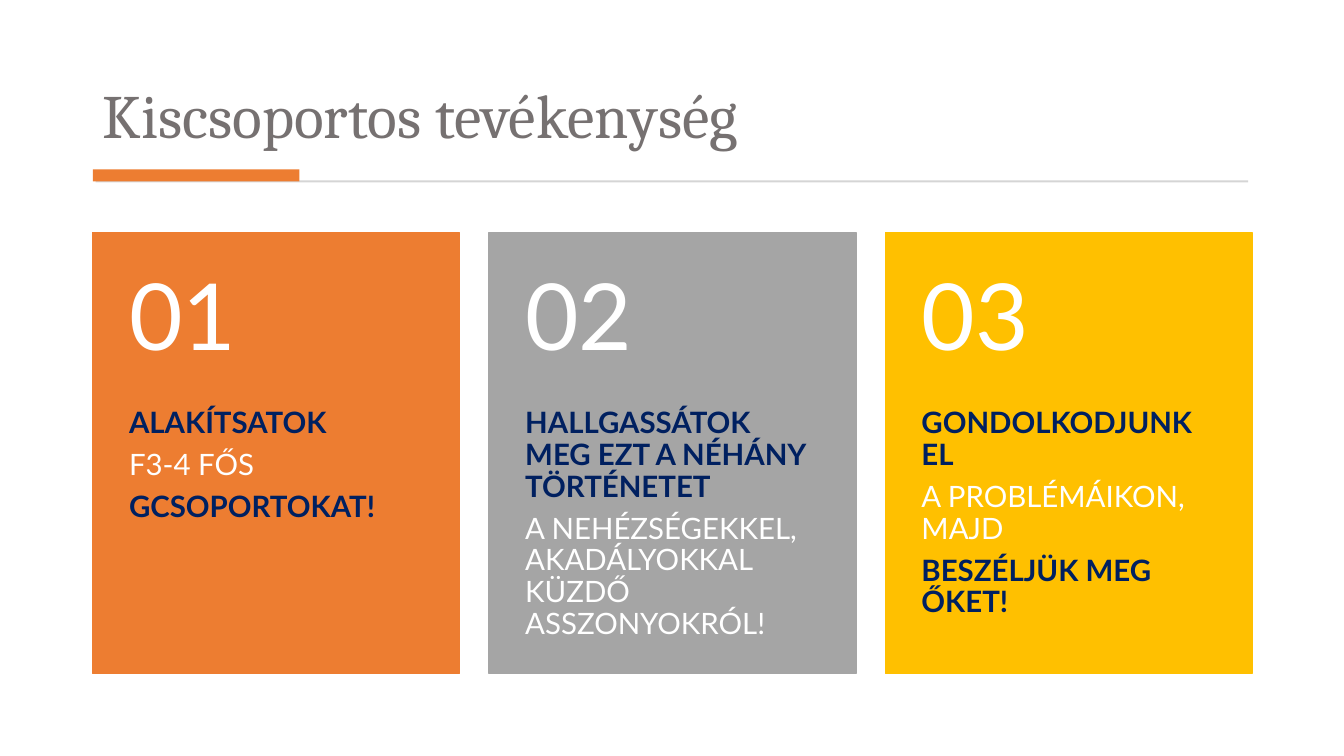
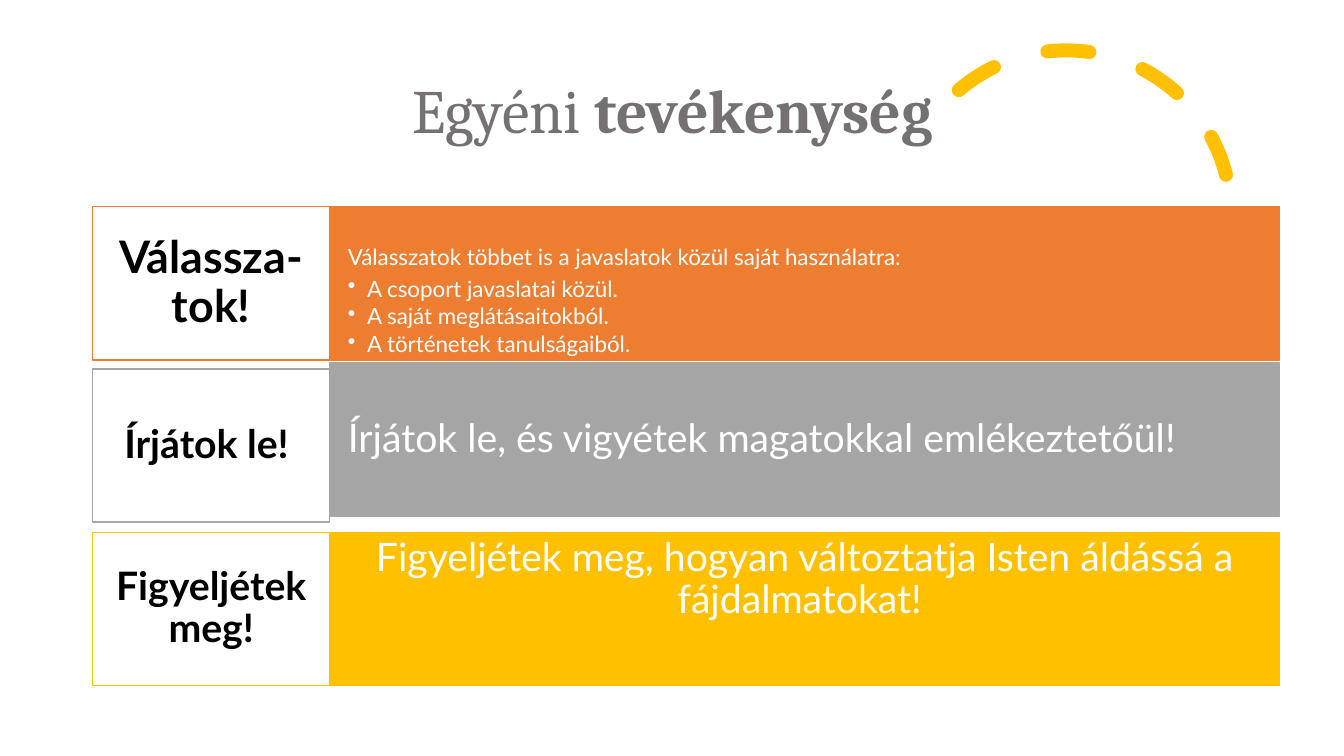
from lxml.etree import SubElement
from pptx import Presentation
from pptx.dml.color import RGBColor
from pptx.enum.dml import MSO_LINE
from pptx.enum.shapes import MSO_SHAPE
from pptx.enum.text import MSO_ANCHOR, PP_ALIGN
from pptx.oxml.ns import qn
from pptx.util import Pt

EMU = 9144  # one px is a hundredth of an inch
ORANGE, GRAY, GOLD = "ED7D31", "A5A5A5", "FFC000"
WHITE, BLACK, NAVY = "FFFFFF", "000000", "002060"
TITLE, RULE = "767171", "D5D5D5"
HEAD, BODY = "Cambria", "Lato"
TOP, MID, LOW = MSO_ANCHOR.TOP, MSO_ANCHOR.MIDDLE, MSO_ANCHOR.BOTTOM
LEFT, MIDST = PP_ALIGN.LEFT, PP_ALIGN.CENTER


def px(*sizes):
    return [size * EMU for size in sizes]


def color(code):
    return RGBColor.from_string(code)


class Deck:
    """Holds the shared style and the slide being built."""

    def __init__(self):
        self.file = Presentation()
        self.file.slide_width, self.file.slide_height = px(1333, 750)
        self.slide = None

    def page(self):
        self.slide = self.file.slides.add_slide(self.file.slide_layouts[6])

    def rect(self, box, fill, line=None):
        shape = self.slide.shapes.add_shape(MSO_SHAPE.RECTANGLE, *px(*box))
        shape.shadow.inherit = False
        shape.fill.solid()
        shape.fill.fore_color.rgb = color(fill)
        if line:
            shape.line.color.rgb = color(line)
            shape.line.width = Pt(1)
        else:
            shape.line.fill.background()
        return shape

    def frame(self, box):
        return self.slide.shapes.add_textbox(*px(*box))

    def text(self, shape, paras, size, inset, anchor=TOP, align=LEFT, font=BODY):
        """Fill a shape; each paragraph is (runs, bullet), each run (text, colour, bold)."""
        frame = shape.text_frame
        frame.word_wrap = True
        frame.vertical_anchor = anchor
        (frame.margin_left, frame.margin_top,
         frame.margin_right, frame.margin_bottom) = px(*inset)
        for n, (runs, bullet) in enumerate(paras):
            para = frame.add_paragraph() if n else frame.paragraphs[0]
            if bullet:
                self.bullet(para)
            para.alignment = align
            para.line_spacing = 0.9
            if n < len(paras) - 1:
                para.space_after = Pt(round(size * (0.15 if bullet else 0.35), 1))
            for words, ink, bold in runs:
                run = para.add_run()
                run.text = words
                run.font.name = font
                run.font.size = Pt(size)
                run.font.bold = bold
                run.font.color.rgb = color(ink)

    def bullet(self, para):
        props = para._p.get_or_add_pPr()
        indent, = px(19)
        props.set("marL", str(indent))
        props.set("indent", str(-indent))
        SubElement(props, qn("a:buChar")).set("char", "•")

    def title(self, box, parts, anchor, align=LEFT):
        runs = [(words, TITLE, bold) for words, bold in parts]
        self.text(self.frame(box), [(runs, False)], 44, (10, 5, 10, 5),
                  anchor, align, HEAD)

    def card(self, left, num, fill, lines):
        """Draw a numbered panel; bold lines are navy, the others white."""
        top, wide, high, head = 231, 364, 437, 174
        panel = self.rect((left, top, wide, high), fill, fill)
        paras = [([(words, NAVY if bold else WHITE, bold)], False)
                 for words, bold in lines]
        self.text(panel, paras, 21, (36, head, 36, 36))
        self.text(self.frame((left, top, wide, head)),
                  [([(f"{num:02}", WHITE, False)], False)], 66,
                  (36, 18, 36, 18), MID)

    def row(self, top, shift, fill, label, big, lines, size, inset, anchor, align):
        """Draw a label box with a text bar; lines after the first are bullets."""
        bar = self.rect((327, top + shift, 942, 152), fill, fill)
        paras = [([(words, WHITE, False)], n > 0) for n, words in enumerate(lines)]
        self.text(bar, paras, size, inset, anchor, align)
        box = self.rect((92, top, 235, 152), WHITE, fill)
        self.text(box, [([(label, BLACK, True)], False)], big,
                  (12, 15, 12, 15), MID, MIDST)

    def arc(self, box, start, end, turn, ink):
        arc = self.slide.shapes.add_shape(MSO_SHAPE.ARC, *px(*box))
        arc.shadow.inherit = False
        arc.adjustments[0], arc.adjustments[1] = start, end
        arc.rotation = turn
        arc.fill.background()
        arc.line.color.rgb = color(ink)
        arc.line.width = Pt(10)
        arc.line.dash_style = MSO_LINE.DASH
        arc.element.spPr.find(qn("a:ln")).set("cap", "rnd")


def group(deck):
    deck.page()
    deck.title((92, 45, 1149, 111), [("Kiscsoportos tevékenység", False)], LOW)
    deck.rect((95, 179, 1143, 2), RULE)
    deck.rect((92, 168, 205, 12), ORANGE)
    cards = [
        (ORANGE, [("ALAKÍTSATOK", True), ("F3-4 FŐS", False),
                  ("GCSOPORTOKAT!", True)]),
        (GRAY, [("HALLGASSÁTOK MEG EZT A NÉHÁNY TÖRTÉNETET", True),
                ("A NEHÉZSÉGEKKEL, AKADÁLYOKKAL KÜZDŐ ASSZONYOKRÓL!", False)]),
        (GOLD, [("GONDOLKODJUNK EL", True), ("A PROBLÉMÁIKON, MAJD", False),
                ("BESZÉLJÜK MEG ŐKET!", True)]),
    ]
    for n, (fill, lines) in enumerate(cards):
        deck.card(92 + n * 393, n + 1, fill, lines)


def single(deck):
    deck.page()
    deck.arc((894, 50, 327, 327), 146.13, 0, 345.8, GOLD)
    deck.title((92, 40, 1150, 145), [("Egyéni ", False), ("tevékenység", True)],
               MID, MIDST)
    wide, high = (18, 39, 18, 39), (18, 5, 18, 5)
    rows = [
        (0, ORANGE, "Válassza-tok!", 32,
         ["Válasszatok többet is a javaslatok közül saját használatra:",
          "A csoport javaslatai közül.",
          "A saját meglátásaitokból.",
          "A történetek tanulságaiból."], 16, wide, TOP, LEFT),
        (-6, GRAY, "Írjátok le! ", 28,
         ["Írjátok le, és vigyétek magatokkal emlékeztetőül!"],
         28, wide, MID, LEFT),
        (0, GOLD, "Figyeljétek meg!", 28,
         ["Figyeljétek meg, hogyan változtatja Isten áldássá a fájdalmatokat! "],
         28, high, TOP, MIDST),
    ]
    for n, row in enumerate(rows):
        deck.row(205 + n * 323 // 2, *row)


def main():
    deck = Deck()
    group(deck)
    single(deck)
    deck.file.save("out.pptx")


if __name__ == "__main__":
    main()
